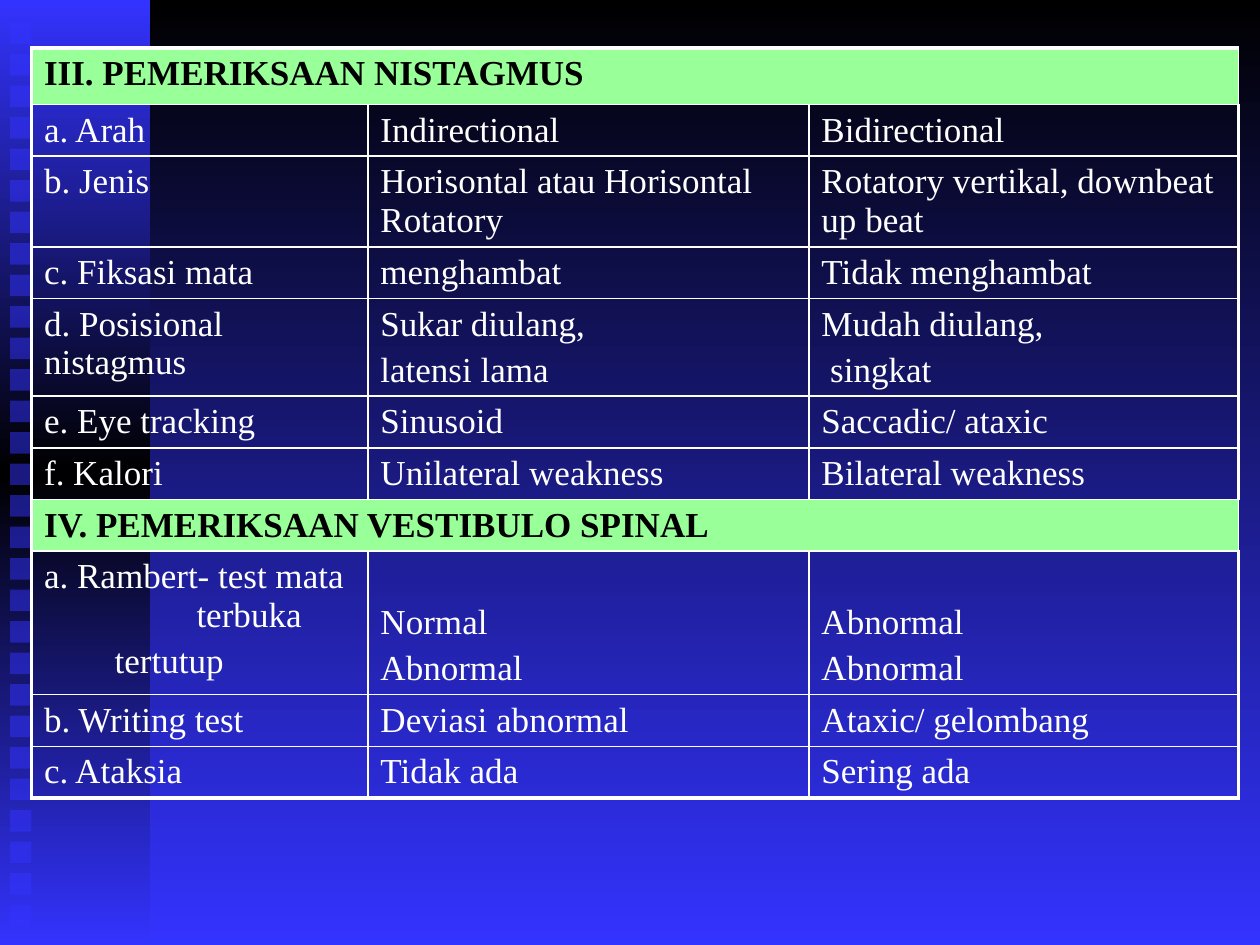
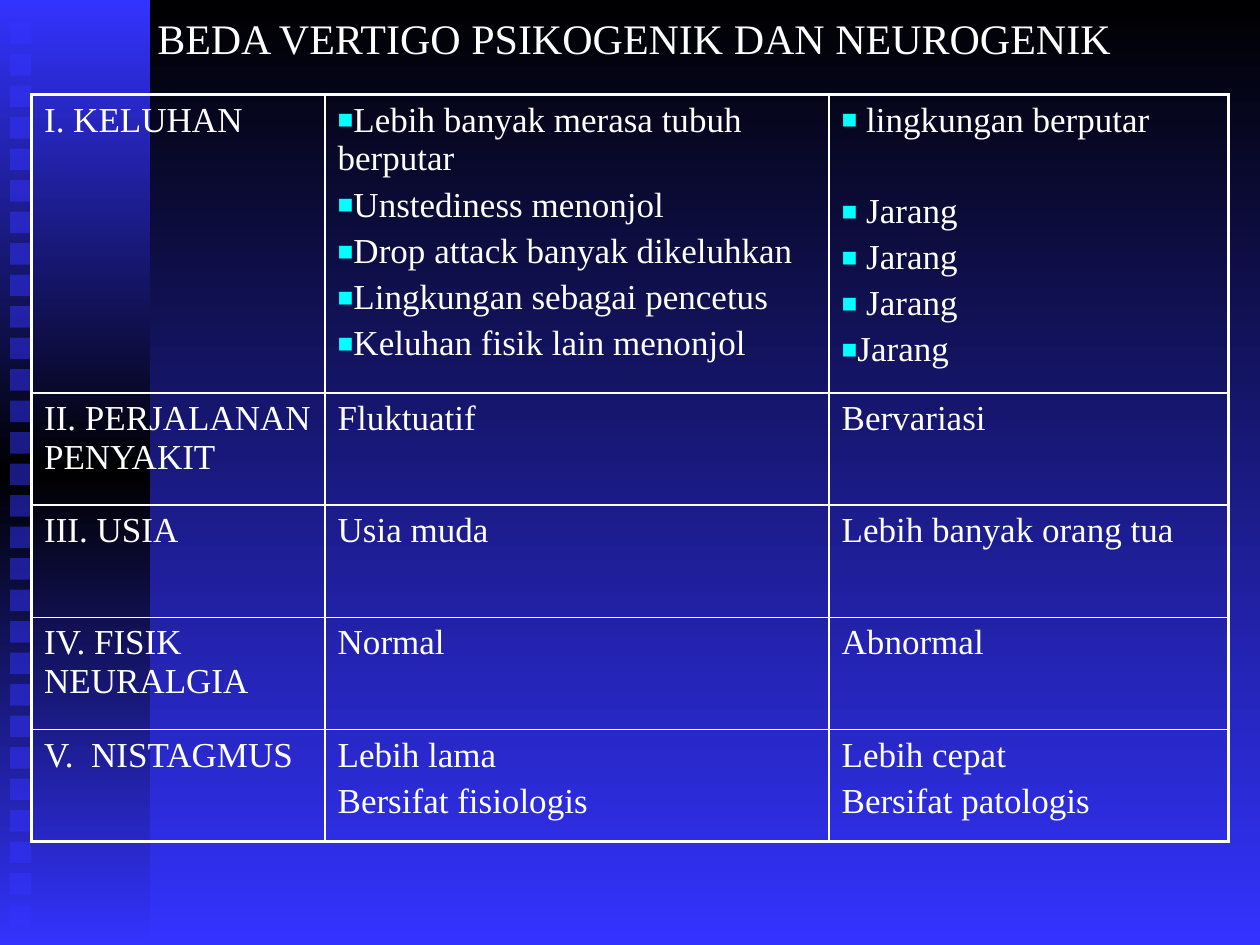
import dataclasses

import lxml.etree
import pptx
import pptx.dml.color
import pptx.enum.shapes
import pptx.enum.text
import pptx.oxml.ns
import pptx.util

Inches = pptx.util.Inches
Pt = pptx.util.Pt
qn = pptx.oxml.ns.qn

FONT = "Times New Roman"
WHITE, BLACK, BLUE = "FFFFFF", "000000", "3333FF"
SECTION_GREEN, BULLET_CYAN = "99FF99", "00FFFF"
THICK, THIN = 2.25, 1
LINE_ROW = 0.41


@dataclasses.dataclass
class Line:
    """One paragraph of a table cell."""
    text: str
    left: float = 0
    before: float = 4.2
    bullet: bool = False


@dataclasses.dataclass
class Cell:
    """The paragraphs of a cell and its top margin."""
    lines: list
    top: float = 0.05


def color(value):
    """Turn a hex string into a colour."""
    return pptx.dml.color.RGBColor.from_string(value)


def add_child(parent, tag, **attributes):
    """Append an XML element with attributes."""
    child = lxml.etree.SubElement(parent, qn(tag))
    for name, value in attributes.items():
        child.set(name, str(value))
    return child


def fill_gradient(fill, *hues):
    """Fill from top to bottom with evenly spaced colours."""
    fill.gradient()
    fill.gradient_angle = 270
    stops = fill.gradient_stops
    stop_list = stops[0]._gs.getparent()
    for stop in list(stop_list):
        stop_list.remove(stop)
    for index, hue in enumerate(hues):
        stop = add_child(stop_list, "a:gs", pos=100000 * index // (len(hues) - 1))
        add_child(stop, "a:srgbClr", val=hue)


def add_rectangle(slide, left, top, width, height):
    """Add a rectangle without line or shadow."""
    box = slide.shapes.add_shape(
        pptx.enum.shapes.MSO_SHAPE.RECTANGLE,
        Inches(left), Inches(top), Inches(width), Inches(height))
    box.shadow.inherit = False
    box.line.fill.background()
    return box


def add_side_band(slide):
    """Draw the left gradient band and its column of squares."""
    band = add_rectangle(slide, 0, 0, 1.19, 7.5)
    fill_gradient(band.fill, BLUE, BLACK, BLUE)
    for index in range(29):
        square = add_rectangle(slide, 0.08, 0.18 + 0.25 * index, 0.17, 0.17)
        square.fill.solid()
        square.fill.fore_color.rgb = color(BLUE)
        hue = square.fill._xPr.find(".//" + qn("a:srgbClr"))
        add_child(hue, "a:alpha", val=50000)


def add_span(para, text, size, hue=WHITE, bold=False):
    """Add one formatted run."""
    span = para.add_run()
    span.text = text
    span.font.name = FONT
    span.font.size = Pt(size)
    span.font.bold = bold
    span.font.color.rgb = color(hue)


def add_title(slide, text, left, top, width, height):
    """Write the slide title."""
    box = slide.shapes.add_textbox(
        Inches(left), Inches(top), Inches(width), Inches(height))
    box.text_frame.word_wrap = False
    add_span(box.text_frame.paragraphs[0], text, 24)


def add_bullet(para):
    """Give a paragraph a small square bullet."""
    properties = para._p.get_or_add_pPr()
    add_child(add_child(properties, "a:buClr"), "a:srgbClr", val=BULLET_CYAN)
    add_child(properties, "a:buSzPct", val=75000)
    add_child(properties, "a:buFont", typeface=FONT)
    add_child(properties, "a:buChar", char="■")


def write_cell(cell, content, is_section):
    """Write the paragraphs of a cell."""
    if isinstance(content, str):
        content = Cell([Line(content)])
    cell.margin_top = Inches(content.top)
    for index, line in enumerate(content.lines):
        frame = cell.text_frame
        para = frame.add_paragraph() if index else frame.paragraphs[0]
        para.space_before = Pt(line.before)
        properties = para._p.get_or_add_pPr()
        properties.set("marL", str(Inches(line.left)))
        properties.set("indent", "0")
        if line.bullet:
            add_bullet(para)
        add_span(para, line.text, 20, BLACK if is_section else WHITE, is_section)


def style_cell(cell, outer_edges, is_section):
    """Draw the borders of a cell and fill section headings."""
    properties = cell._tc.get_or_add_tcPr()
    for side in "LRTB":
        weight = THICK if side in outer_edges else THIN
        border = add_child(properties, "a:ln" + side, w=Pt(weight))
        add_child(add_child(border, "a:solidFill"), "a:srgbClr", val=WHITE)
    if is_section:
        cell.fill.solid()
        cell.fill.fore_color.rgb = color(SECTION_GREEN)
    else:
        cell.fill.background()


def add_comparison(slide, left, top, widths, rows):
    """Add a comparison table; a row with one entry is a section heading."""
    heights = [height for height, *_ in rows]
    table = slide.shapes.add_table(
        len(rows), len(widths), Inches(left), Inches(top),
        Inches(sum(widths)), Inches(sum(heights))).table
    table.first_row = table.horz_banding = False
    for column, width in zip(table.columns, widths):
        column.width = Inches(width)
    last_row, last_column = len(rows) - 1, len(widths) - 1
    for row_index, (height, *contents) in enumerate(rows):
        table.rows[row_index].height = Inches(height)
        is_section = len(contents) == 1
        for column_index in range(len(widths)):
            edges = {"L": column_index == 0, "R": column_index == last_column,
                     "T": row_index == 0, "B": row_index == last_row}
            outer_edges = [side for side, is_outer in edges.items() if is_outer]
            style_cell(table.cell(row_index, column_index), outer_edges, is_section)
        if is_section:
            table.cell(row_index, 0).merge(table.cell(row_index, last_column))
        for column_index, content in enumerate(contents):
            write_cell(table.cell(row_index, column_index), content, is_section)


def lines(*texts, top=0.05):
    """Make a cell of plain paragraphs."""
    return Cell([Line(text) for text in texts], top)


def bullets(*texts):
    """Make a cell of bulleted paragraphs."""
    return Cell([Line(text, bullet=True) for text in texts])


def add_examination_slide(slide):
    """Build the nystagmus and vestibulospinal examination slide."""
    romberg = Cell([Line("a. Rambert- test mata"),
                    Line("terbuka", left=1.21, before=0),
                    Line("tertutup", left=0.56)])
    add_comparison(slide, 0.25, 0.38, [2.67, 3.5, 3.41], [
        (0.45, "III. PEMERIKSAAN NISTAGMUS"),
        (LINE_ROW, "a. Arah", "Indirectional", "Bidirectional"),
        (0.72, "b. Jenis", "Horisontal atau Horisontal Rotatory",
         "Rotatory vertikal, downbeat up beat"),
        (LINE_ROW, "c. Fiksasi mata", "menghambat", "Tidak menghambat"),
        (0.77, "d. Posisional nistagmus", lines("Sukar diulang,", "latensi lama"),
         lines("Mudah diulang,", " singkat")),
        (LINE_ROW, "e. Eye tracking", "Sinusoid", "Saccadic/ ataxic"),
        (LINE_ROW, "f. Kalori", "Unilateral weakness", "Bilateral weakness"),
        (LINE_ROW, "IV. PEMERIKSAAN VESTIBULO SPINAL"),
        (1.14, romberg, lines("Normal", "Abnormal", top=0.41),
         lines("Abnormal", "Abnormal", top=0.41)),
        (LINE_ROW, "b. Writing test", "Deviasi abnormal", "Ataxic/ gelombang"),
        (LINE_ROW, "c. Ataksia", "Tidak ada", "Sering ada"),
    ])


def add_vertigo_slide(slide):
    """Build the psychogenic and neurogenic vertigo slide."""
    add_title(slide, "BEDA VERTIGO PSIKOGENIK DAN NEUROGENIK", 1.15, 0.05, 7.82, 0.5)
    psychogenic = bullets(
        "Lebih banyak merasa tubuh berputar", "Unstediness menonjol",
        "Drop attack banyak dikeluhkan", "Lingkungan sebagai pencetus",
        "Keluhan fisik lain menonjol")
    neurogenic = bullets(" lingkungan berputar", " Jarang", " Jarang", " Jarang", "Jarang")
    neurogenic.lines[1].before = 30
    add_comparison(slide, 0.25, 0.75, [2.33, 4, 3.17], [
        (2.37, "I. KELUHAN", psychogenic, neurogenic),
        (0.89, "II. PERJALANAN PENYAKIT", "Fluktuatif", "Bervariasi"),
        (0.89, "III. USIA", "Usia muda", "Lebih banyak orang tua"),
        (0.89, "IV. FISIK NEURALGIA", "Normal", "Abnormal"),
        (0.89, "V.  NISTAGMUS", lines("Lebih lama", "Bersifat fisiologis"),
         lines("Lebih cepat", "Bersifat patologis")),
    ])


def main():
    """Build and save the deck."""
    deck = pptx.Presentation()
    deck.slide_width, deck.slide_height = Inches(10), Inches(7.5)
    fill_gradient(deck.slide_master.background.fill, BLACK, BLUE)
    for build in (add_examination_slide, add_vertigo_slide):
        slide = deck.slides.add_slide(deck.slide_layouts[6])
        add_side_band(slide)
        build(slide)
    deck.save("out.pptx")


if __name__ == "__main__":
    main()
